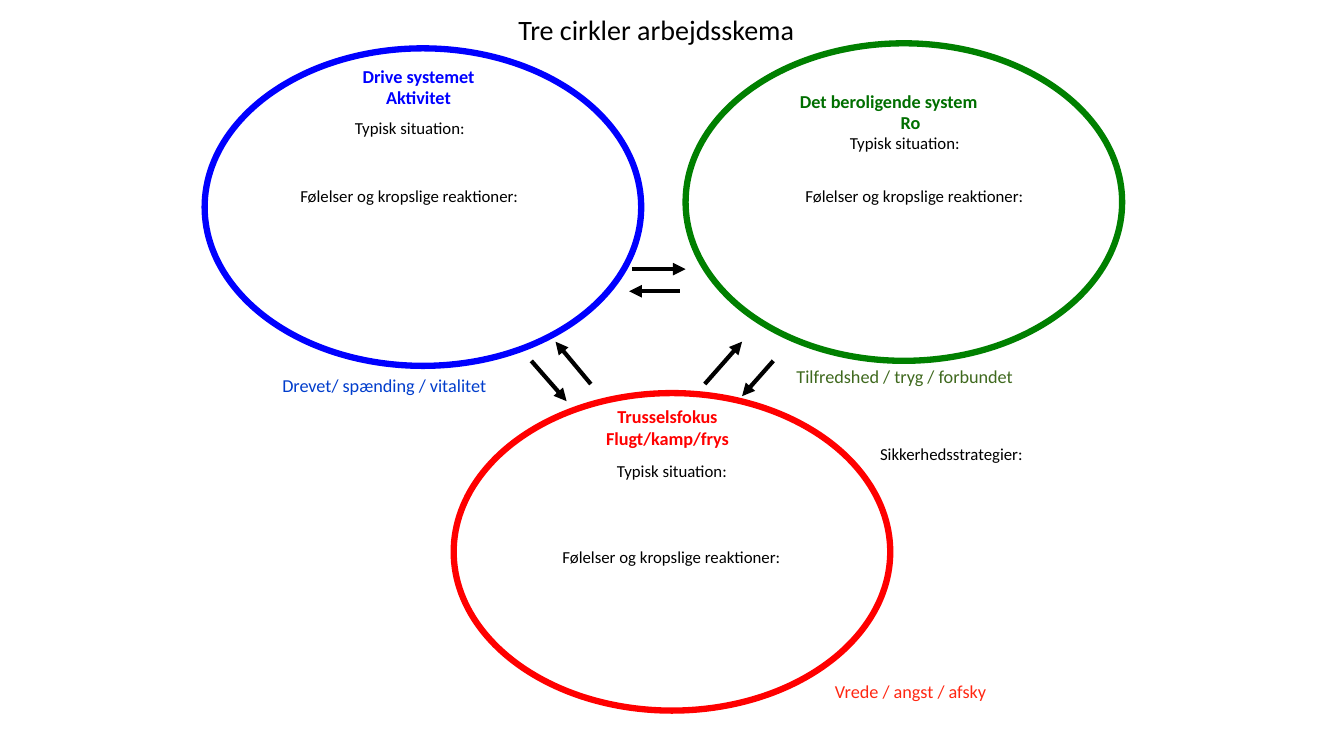
"""Build the worksheet slide with three circles."""
from pptx import Presentation
from pptx.dml.color import RGBColor
from pptx.enum import shapes, text
from pptx.oxml import ns, xmlchemy as xc
from pptx.util import Inches, Pt

COLORS = {
    "black": "000000", "white": "FFFFFF",
    "drive": "0000FF", "drive_mood": "003DCC",
    "calm": "008000", "calm_heading": "006F00", "calm_mood": "3F691E",
    "threat": "FF0000", "threat_mood": "FF2712",
}
CIRCLE_SIZE = (4.33, 3.15)
PROMPTS = (("Typisk situation:", 1.31), ("Følelser og kropslige reaktioner:", 2.39))
PROMPT_INSETS = (0.1, 0.05, 0.1, 0.05)
HEADING_INSETS = (0.04, 0.04, 0.13, 0.04)
MOOD_INSETS = (0.04, 0, 0.04, 0)


def rgb(name):
    """Return the named colour."""
    return RGBColor.from_string(COLORS[name])


def write(frame, lines, size, color, insets, bold=False, align=text.PP_ALIGN.LEFT,
          anchor=text.MSO_ANCHOR.TOP):
    """Fill a text frame with one paragraph per line and return the paragraphs."""
    frame.margin_left, frame.margin_top, frame.margin_right, frame.margin_bottom = map(Inches, insets)
    frame.vertical_anchor = anchor
    for number, line in enumerate(lines):
        paragraph = frame.paragraphs[0] if number == 0 else frame.add_paragraph()
        paragraph.alignment = align
        run = paragraph.add_run()
        run.text = line
        run.font.name, run.font.size, run.font.bold = "Calibri", Pt(size), bold
        run.font.color.rgb = rgb(color)
    return frame.paragraphs


def add_label(slide, box, lines, size, color, insets, **style):
    """Add an unwrapped text box that fits its text."""
    frame = slide.shapes.add_textbox(*map(Inches, box)).text_frame
    frame.word_wrap = False
    frame.auto_size = text.MSO_AUTO_SIZE.SHAPE_TO_FIT_TEXT
    write(frame, lines, size, color, insets, **style)


def add_title(slide, box):
    """Place and format the slide title."""
    title = slide.shapes.title
    title.left, title.top, title.width, title.height = map(Inches, box)
    write(title.text_frame, ["Tre cirkler arbejdsskema"], 20, "black", (0.07, 0.03, 0.11, 0.03),
          align=text.PP_ALIGN.CENTER, anchor=text.MSO_ANCHOR.MIDDLE)


def add_circle(slide, left, top, color):
    """Add one outlined circle and return it."""
    circle = slide.shapes.add_shape(shapes.MSO_SHAPE.OVAL, *map(Inches, (left, top, *CIRCLE_SIZE)))
    circle.shadow.inherit = False
    circle.fill.solid()
    circle.fill.fore_color.rgb = rgb("white")
    circle.line.color.rgb = rgb(color)
    circle.line.width = Pt(4.5)
    return circle


def add_prompts(slide, left, top, offsets):
    """Add the two prompts at their offsets from the circle's corner."""
    for (prompt, width), (dx, dy) in zip(PROMPTS, offsets):
        add_label(slide, (left + dx, top + dy, width, 0.3), [prompt], 12, "black", PROMPT_INSETS)


def add_system(slide, left, top, color, heading, heading_box, prompt_offsets):
    """Add a circle with a centred heading and its prompts."""
    add_circle(slide, left, top, color)
    dx, dy, width = heading_box
    add_label(slide, (left + dx, top + dy, width, 0.52), heading, 13, color, HEADING_INSETS,
              bold=True, align=text.PP_ALIGN.CENTER, anchor=text.MSO_ANCHOR.MIDDLE)
    add_prompts(slide, left, top, prompt_offsets)


def add_calm_system(slide, left, top):
    """Add the calming circle with its indented heading and prompts."""
    frame = add_circle(slide, left, top, "calm").text_frame
    heading = write(frame, ["Det beroligende system", "Ro"], 13, "calm_heading", (0, 0, 0, 0), bold=True)
    for paragraph, indent in zip(heading, (0.5, 1.5)):
        paragraph._p.get_or_add_pPr().set("marL", str(Inches(indent)))
    add_prompts(slide, left, top, ((1.53, 0.84), (1.09, 1.36)))


def add_mood(slide, left, top, width, mood, color):
    """Add the mood caption beside a circle."""
    add_label(slide, (left, top, width, 0.22), [mood], 13, color, MOOD_INSETS)


def add_arrow(slide, start, end):
    """Add a black arrow from start to end."""
    arrow = slide.shapes.add_connector(shapes.MSO_CONNECTOR.STRAIGHT, *map(Inches, (*start, *end)))
    arrow.line.color.rgb = rgb("black")
    arrow.line.width = Pt(3)
    head = xc.OxmlElement("a:tailEnd")
    head.set("type", "triangle")
    arrow._element.spPr.find(ns.qn("a:ln")).append(head)
    arrow._element.spPr.append(xc.OxmlElement("a:effectLst"))


def main():
    """Build and save the slide."""
    deck = Presentation()
    deck.slide_width, deck.slide_height = Inches(13.33), Inches(7.5)
    slide = deck.slides.add_slide(deck.slide_layouts[5])

    add_title(slide, (2.28, -0.58, 8.5, 1.75))
    add_system(slide, 2.03, 0.48, "drive", ["Drive systemet", "Aktivitet"],
               (1.51, 0.12, 1.31), ((1.39, 0.64), (0.85, 1.31)))
    add_calm_system(slide, 6.8, 0.43)
    add_system(slide, 4.5, 3.9, "threat", ["Trusselsfokus", "Flugt/kamp/frys"],
               (1.45, 0.08, 1.43), ((1.52, 0.62), (0.98, 1.47)))

    for start, end in (
        ((6.27, 2.67), (6.8, 2.67)), ((6.74, 2.89), (6.24, 2.89)),
        ((7.67, 3.58), (7.36, 3.93)), ((6.99, 3.81), (7.36, 3.39)),
        ((5.86, 3.81), (5.51, 3.39)), ((5.27, 3.58), (5.62, 3.98)),
    ):
        add_arrow(slide, start, end)

    add_mood(slide, 7.86, 3.62, 2.27, "Tilfredshed / tryg / forbundet", "calm_mood")
    add_mood(slide, 2.76, 3.71, 2.14, "Drevet/ spænding / vitalitet", "drive_mood")
    add_mood(slide, 8.24, 6.75, 1.61, "Vrede / angst / afsky", "threat_mood")
    add_label(slide, (8.63, 4.35, 1.65, 0.3), ["Sikkerhedsstrategier:"], 12, "black", PROMPT_INSETS)
    deck.save("out.pptx")


if __name__ == "__main__":
    main()
